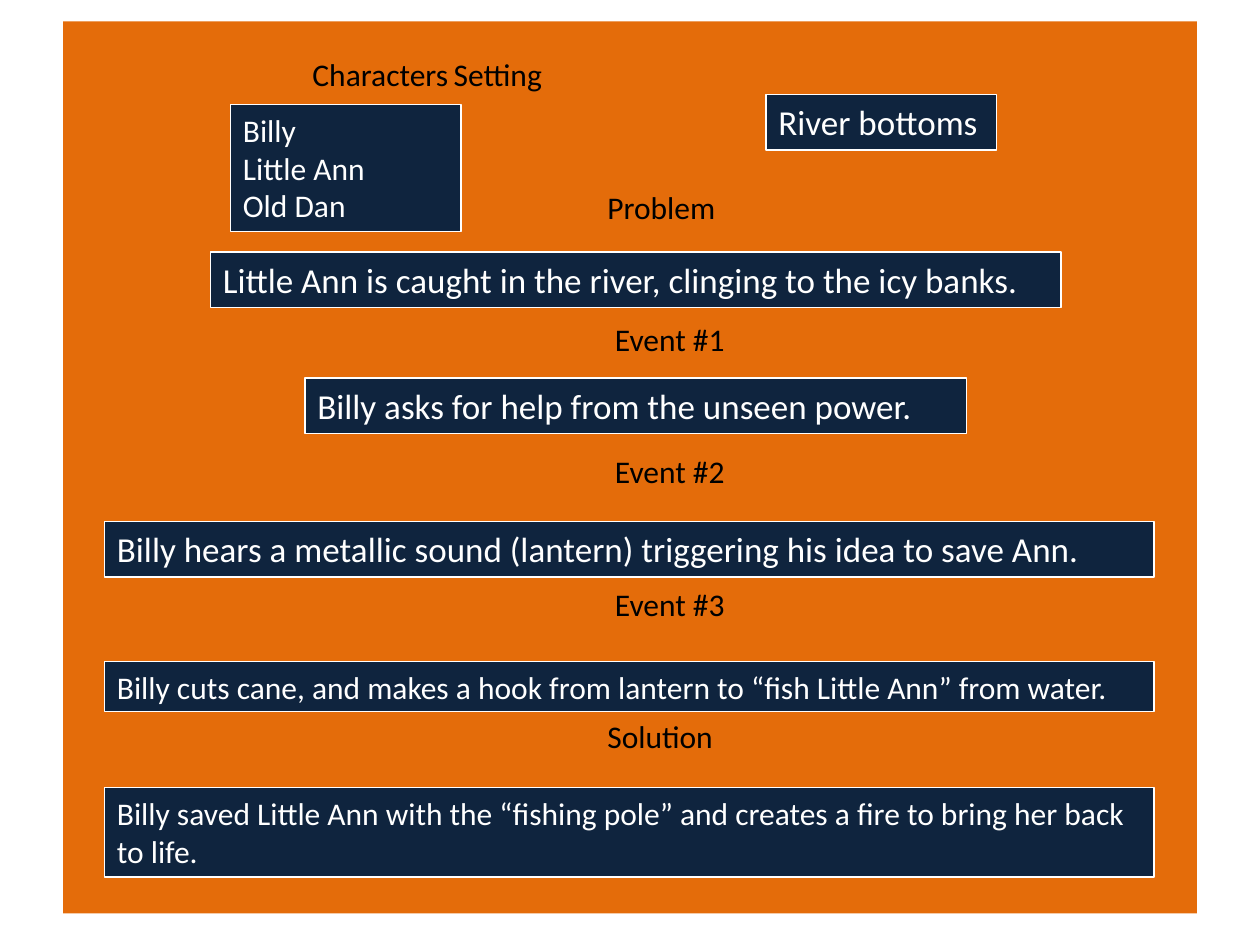
"""Build a one-slide story map with characters, setting, problem, events and solution."""
from lxml import etree
from pptx import Presentation
from pptx.dml.color import RGBColor
from pptx.enum.text import MSO_ANCHOR, MSO_AUTO_SIZE
from pptx.oxml.ns import qn
from pptx.util import Inches, Pt

ORANGE = RGBColor(0xE4, 0x6C, 0x0A)
NAVY = RGBColor(0x0F, 0x24, 0x3E)
WHITE = RGBColor(0xFF, 0xFF, 0xFF)
BLACK = RGBColor(0x00, 0x00, 0x00)
FONT = "Calibri"

HEADINGS = [
    (["Characters", "\tSetting"], 1.88),
    (["Problem"], 4.22),
    (["Event #1"], 4.28),
    (["Event #2"], 4.28),
    (["Event #3"], 4.28),
    (["Solution"], 4.22),
]
SETTING_TAB = 6.38

ANSWERS = [
    (["Billy", "Little Ann", "Old Dan"], 18, 1.83, 0.83, 1.83, 1.01),
    (["River bottoms"], 20, 6.08, 0.75, 1.83, 0.44),
    (["Little Ann is caught in the river, clinging to the icy banks."],
     20, 1.67, 2, 6.75, 0.44),
    (["Billy asks for help from the unseen power."], 20, 2.42, 3, 5.25, 0.44),
    (["Billy hears a metallic sound (lantern) triggering his idea to save Ann."],
     20, 0.83, 4.14, 8.33, 0.44),
    (["Billy cuts cane, and makes a hook from lantern to “fish Little Ann” from water."],
     18, 0.83, 5.25, 8.33, 0.4),
    (["Billy saved Little Ann with the “fishing pole” and creates a fire "
      "to bring her back to life."], 18, 0.83, 6.25, 8.33, 0.71),
]


def add_run(paragraph, text, size, color):
    run = paragraph.add_run()
    run.text = text
    run.font.name = FONT
    run.font.size = Pt(size)
    run.font.color.rgb = color


prs = Presentation()
prs.slide_width = Inches(10)
prs.slide_height = Inches(7.5)
slide = prs.slides.add_slide(prs.slide_layouts[1])
title = slide.shapes.title.element
title.getparent().remove(title)

story_map = slide.placeholders[1]
story_map.left, story_map.top = Inches(0.5), Inches(0.17)
story_map.width, story_map.height = Inches(9), Inches(7.08)
story_map.fill.solid()
story_map.fill.fore_color.rgb = ORANGE
headings = story_map.text_frame
headings.auto_size = MSO_AUTO_SIZE.NONE
headings.vertical_anchor = MSO_ANCHOR.TOP
headings.margin_top = Inches(0.27)

for index, (words, indent) in enumerate(HEADINGS):
    heading = headings.add_paragraph() if index else headings.paragraphs[0]
    heading.space_before = Pt(54 if index else 0)
    properties = heading._p.get_or_add_pPr()
    properties.set("marL", "0")
    properties.set("indent", str(Inches(indent)))
    etree.SubElement(properties, qn("a:buNone"))
    if len(words) > 1:
        tabs = etree.SubElement(properties, qn("a:tabLst"))
        etree.SubElement(tabs, qn("a:tab"), pos=str(Inches(SETTING_TAB)), algn="l")
    for word in words:
        add_run(heading, word, 18, BLACK)

for lines, size, left, top, width, height in ANSWERS:
    answer = slide.shapes.add_textbox(
        Inches(left), Inches(top), Inches(width), Inches(height))
    answer.fill.solid()
    answer.fill.fore_color.rgb = NAVY
    answer.line.color.rgb = WHITE
    answer.line.width = Pt(0.75)
    frame = answer.text_frame
    frame.word_wrap = True
    frame.auto_size = MSO_AUTO_SIZE.SHAPE_TO_FIT_TEXT
    for index, line in enumerate(lines):
        paragraph = frame.add_paragraph() if index else frame.paragraphs[0]
        add_run(paragraph, line, size, WHITE)

prs.save("out.pptx")
